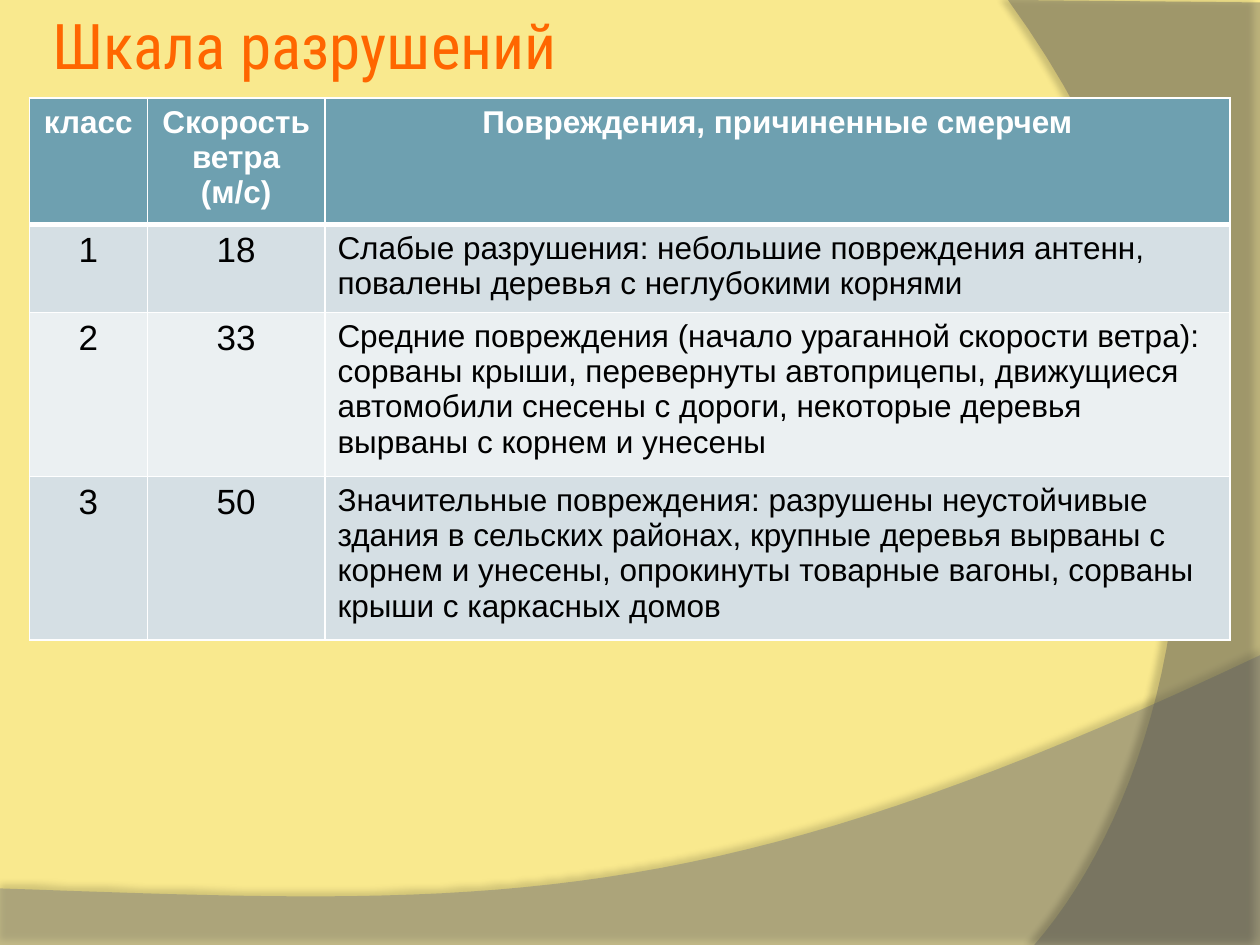
from lxml.etree import SubElement
from pptx import Presentation
from pptx.dml.color import RGBColor
from pptx.enum.text import MSO_ANCHOR, PP_ALIGN
from pptx.oxml.ns import qn
from pptx.util import Cm, Pt

HUES = {
    "back": "F9E98E", "wave": "7F7F7F", "band": "5E5E5E", "title": "FF6600",
    "head": "6EA0B0", "odd": "D5DFE4", "even": "EBF0F2",
    "white": "FFFFFF", "black": "000000",
}


def paint(fill, name):
    fill.solid()
    fill.fore_color.rgb = RGBColor.from_string(HUES[name])


def add_hue(node, name, alpha=100):
    hue = SubElement(node, qn("a:srgbClr"), val=HUES[name])
    SubElement(hue, qn("a:alpha"), val=str(alpha * 1000))


deck = Presentation()
deck.slide_width, deck.slide_height = Cm(25.4), Cm(19.05)
slide = deck.slides.add_slide(deck.slide_layouts[6])
paint(slide.background.fill, "back")

# Curved backdrop: corner points, then a Bezier curve from the last corner
# (name, fill alpha, corners, curve, shadow alpha, distance, angle)
swoops = [
    ("wave", 45, [(0, 17.91), (0, 19.05), (25.4, 19.05), (25.4, 13.21)],
     [(14.2, 18.52), (9.93, 18.26), (0, 17.91)], 35, 3.5, 270),
    ("band", 40, [(25.4, 0.05), (25.4, 19.05), (20.85, 19.05)],
     [(23.75, 15.72), (25.86, 7.62), (20.32, 0)], 45, 4, 180),
]
STEPS = 40
for name, alpha, dots, curve, dark, dist, angle in swoops:
    knots = [dots[-1]] + curve
    dots = list(dots)
    for i in range(1, STEPS + 1):
        t = i / STEPS
        s = 1 - t
        parts = (s ** 3, 3 * s * s * t, 3 * s * t * t, t ** 3)
        dots.append(tuple(sum(w * k[n] for w, k in zip(parts, knots))
                          for n in (0, 1)))
    spots = [(Cm(x), Cm(y)) for x, y in dots]
    pen = slide.shapes.build_freeform(*spots[0])
    pen.add_line_segments(spots[1:], close=True)
    swoop = pen.convert_to_shape()
    paint(swoop.fill, name)
    swoop.line.fill.background()
    swoop.shadow.inherit = False
    props = swoop._element.spPr
    tint = props.find(qn("a:solidFill")).find(qn("a:srgbClr"))
    SubElement(tint, qn("a:alpha"), val=str(alpha * 1000))
    shade = SubElement(props.find(qn("a:effectLst")), qn("a:outerShdw"),
                       blurRad=str(Pt(4)), dist=str(Pt(dist)),
                       dir=str(angle * 60000), rotWithShape="0")
    add_hue(shade, "black", dark)

# Title
box = slide.shapes.add_textbox(0, 0, Cm(25.4), Cm(1.78))
frame = box.text_frame
frame.word_wrap = True
frame.margin_left = Cm(1.05)
frame.vertical_anchor = MSO_ANCHOR.MIDDLE
para = frame.paragraphs[0]
para.text = "Шкала разрушений"
para.font.name, para.font.size = "Roboto Condensed", Pt(36)
paint(para.font.fill, "title")

# Damage table
rows = [
    ("класс", "Скорость ветра (м/с)", "Повреждения, причиненные смерчем"),
    ("1", "18", "Слабые разрушения: небольшие повреждения антенн, "
     "повалены деревья с неглубокими корнями"),
    ("2", "33", "Средние повреждения (начало ураганной скорости ветра): "
     "сорваны крыши, перевернуты автоприцепы, движущиеся автомобили "
     "снесены с дороги, некоторые деревья вырваны с корнем и унесены"),
    ("3", "50", "Значительные повреждения: разрушены неустойчивые здания "
     "в сельских районах, крупные деревья вырваны с корнем и унесены, "
     "опрокинуты товарные вагоны, сорваны крыши с каркасных домов"),
]
wides = [2.38, 3.58, 18.25]
highs = [2.38, 1.69, 3.1, 3.1]
grid = slide.shapes.add_table(
    len(rows), len(wides), Cm(0.59), Cm(1.98),
    Cm(sum(wides)), Cm(sum(highs))).table
for col, wide in zip(grid.columns, wides):
    col.width = Cm(wide)
for row, high in zip(grid.rows, highs):
    row.height = Cm(high)

for r, row in enumerate(rows):
    for c, text in enumerate(row):
        cell = grid.cell(r, c)
        cell.text = text
        head = r == 0
        # Borders, with a thick rule below the header
        thick = {"lnT": r == 1, "lnB": head}
        props = cell._tc.get_or_add_tcPr()
        for side in ("lnL", "lnR", "lnT", "lnB"):
            size = 3 if thick.get(side) else 1
            edge = SubElement(props, qn("a:" + side), w=str(Pt(size)))
            add_hue(SubElement(edge, qn("a:solidFill")), "white")
        paint(cell.fill, "head" if head else "odd" if r % 2 else "even")
        # Text
        para = cell.text_frame.paragraphs[0]
        para.alignment = PP_ALIGN.CENTER if head or c < 2 else PP_ALIGN.LEFT
        para.font.name = "Arial"
        para.font.size = Pt(18 if head or c == 2 else 20)
        para.font.bold = head
        paint(para.font.fill, "white" if head else "black")

deck.save("out.pptx")
